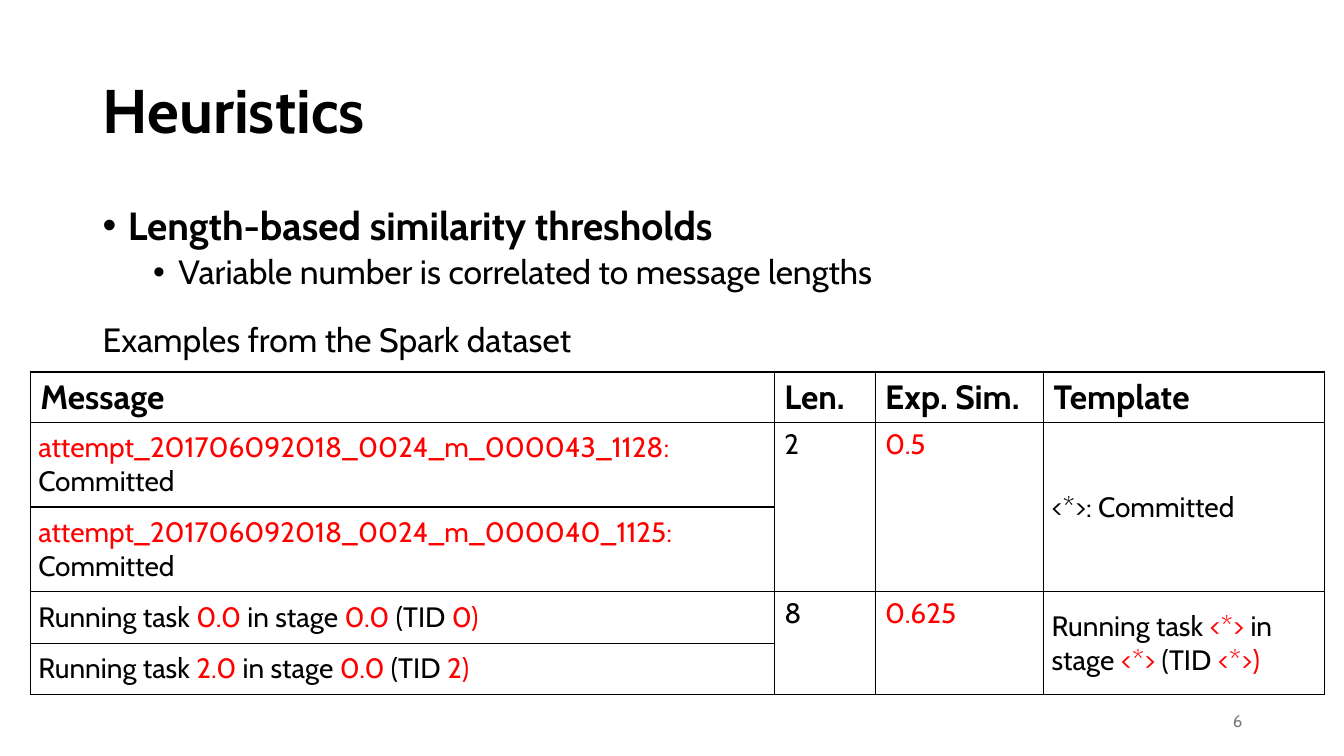
from lxml.etree import SubElement
from pptx import Presentation
from pptx.dml.color import RGBColor
from pptx.enum.text import MSO_ANCHOR, PP_ALIGN
from pptx.oxml.ns import qn
from pptx.util import Inches, Pt

BLACK = RGBColor(0, 0, 0)
RED = RGBColor(0xFF, 0, 0)
GRAY = RGBColor(0x79, 0x79, 0x79)
FONT = "Cabin"

# Content: text between bars is red
TITLE = "Heuristics"
# text, size, bold, indent in inches, space before
POINTS = [
    ("Length-based similarity thresholds", 28, True, 0.25, 0),
    ("Variable number is correlated to message lengths", 24, False, 0.75, 5),
]
LABEL = "Examples from the Spark dataset"
HEAD = ["Message", "Len.", "Exp. Sim.", "Template"]
GROUPS = [
    (["|attempt_201706092018_0024_m_000043_1128: |Committed",
      "|attempt_201706092018_0024_m_000040_1125: |Committed"],
     ["2", "|0.5|", "<*>: Committed"]),
    (["Running task |0.0| in stage |0.0| (TID |0)|",
      "Running task |2.0| in stage |0.0| (TID |2)|"],
     ["8", "|0.625|", "Running task |<*>| in stage |<*>| (TID |<*>)|"]),
]
WIDTHS = [7.38, 1, 1.67, 2.79]
HEIGHTS = [0.5, 0.84, 0.84, 0.51, 0.51]
PAD = 0.08


def style(para, size, color=BLACK, bold=False):
    font = para.font
    font.name, font.size, font.bold = FONT, Pt(size), bold
    font.color.rgb = color


def add_box(left, top, width, height, anchor=MSO_ANCHOR.TOP, wrap=True):
    box = slide.shapes.add_textbox(*map(Inches, (left, top, width, height)))
    frame = box.text_frame
    frame.word_wrap, frame.vertical_anchor = wrap, anchor
    return frame


def add_line(frame, text, size, color=BLACK, bold=False):
    para = frame.paragraphs[0]
    para.text = text
    style(para, size, color, bold)
    return para


def fill_cell(cell, text, size=20, bold=False, padded=False):
    para = cell.text_frame.paragraphs[0]
    style(para, size, BLACK, bold)
    for i, part in enumerate(text.split("|")):
        if part:
            run = para.add_run()
            run.text = part
            font = run.font
            font.name, font.size, font.bold = FONT, Pt(size), bold
            font.color.rgb = RED if i % 2 else BLACK
    if padded:
        cell.vertical_anchor = MSO_ANCHOR.MIDDLE
        cell.margin_left = cell.margin_right = Inches(PAD)
        cell.margin_top = cell.margin_bottom = Inches(PAD)


def frame_cell(cell):
    props = cell._tc.get_or_add_tcPr()
    for side in ("a:lnL", "a:lnR", "a:lnT", "a:lnB"):
        edge = SubElement(props, qn(side), w=str(Pt(1)))
        solid = SubElement(edge, qn("a:solidFill"))
        SubElement(solid, qn("a:srgbClr"), val=str(BLACK))
    cell.fill.background()


deck = Presentation()
deck.slide_width, deck.slide_height = Inches(13.33), Inches(7.5)
slide = deck.slides.add_slide(deck.slide_layouts[6])

# Title
para = add_line(add_box(0.92, 0.4, 11.5, 1.45, MSO_ANCHOR.MIDDLE),
                TITLE, 44, bold=True)
para.line_spacing = 0.9

# Bullet points
body = add_box(0.92, 2, 11.5, 1.1)
for i, (text, size, bold, indent, space) in enumerate(POINTS):
    para = body.add_paragraph() if i else body.paragraphs[0]
    para.text = text
    para.level = i
    para.line_spacing = 0.9
    para.space_before = Pt(space)
    props = para._p.get_or_add_pPr()
    props.set("marL", str(Inches(indent)))
    props.set("indent", str(Inches(-0.25)))
    SubElement(props, qn("a:buFont"), typeface="Arial")
    SubElement(props, qn("a:buChar"), char="•")
    style(para, size, bold=bold)

# Page number
para = add_line(add_box(9.42, 6.95, 3, 0.4, MSO_ANCHOR.MIDDLE), "6", 12, GRAY)
para.alignment = PP_ALIGN.RIGHT

# Table
table = slide.shapes.add_table(
    len(HEIGHTS), len(WIDTHS), Inches(0.3), Inches(3.69),
    Inches(sum(WIDTHS)), Inches(sum(HEIGHTS))).table
table.first_row = table.horz_banding = False
for col, width in zip(table.columns, WIDTHS):
    col.width = Inches(width)
for row, height in zip(table.rows, HEIGHTS):
    row.height = Inches(height)
for cell in table.iter_cells():
    frame_cell(cell)
for col, text in enumerate(HEAD):
    fill_cell(table.cell(0, col), text, 24, True)
top = 1
for logs, facts in GROUPS:
    for i, text in enumerate(logs):
        fill_cell(table.cell(top + i, 0), text, padded=True)
    for col, text in enumerate(facts, 1):
        cell = table.cell(top, col)
        cell.merge(table.cell(top + len(logs) - 1, col))
        fill_cell(cell, text, padded=col == len(facts))
    top += len(logs)

# Table label
add_line(add_box(0.92, 3.11, 4.98, 0.5, wrap=False), LABEL, 24)

deck.save("out.pptx")
